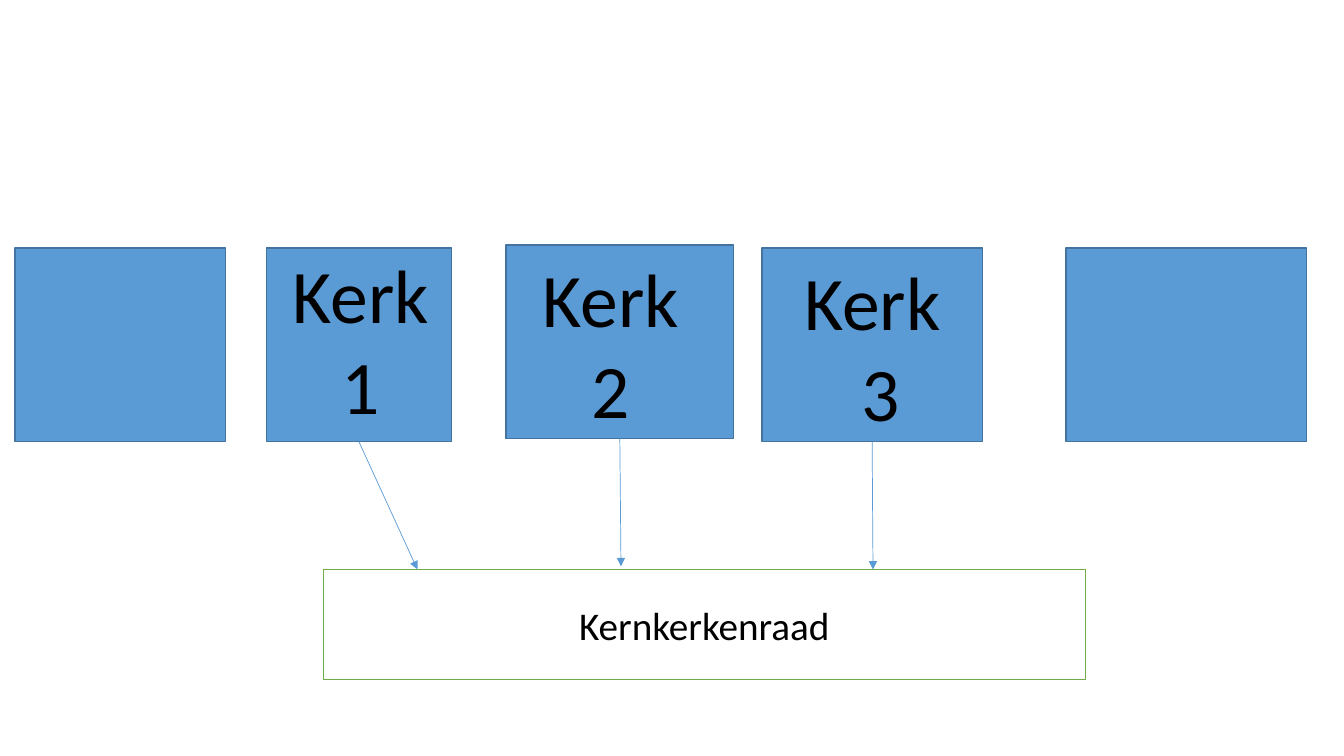
from lxml import etree
from pptx import Presentation
from pptx.dml.color import RGBColor
from pptx.enum.shapes import MSO_CONNECTOR, MSO_SHAPE
from pptx.enum.text import MSO_ANCHOR, MSO_AUTO_SIZE, PP_ALIGN
from pptx.oxml.ns import qn
from pptx.util import Cm, Pt

BLUE = RGBColor(0x5B, 0x9B, 0xD5)
NAVY = RGBColor(0x43, 0x73, 0x9E)
GREEN = RGBColor(0x70, 0xAD, 0x47)
WHITE = RGBColor(0xFF, 0xFF, 0xFF)
BLACK = RGBColor(0x00, 0x00, 0x00)

deck = Presentation()
deck.slide_width, deck.slide_height = Cm(33.87), Cm(19.05)
slide = deck.slides.add_slide(deck.slide_layouts[6])
shapes = slide.shapes


def add_box(left, top, width, height, fill, edge):
    box = shapes.add_shape(MSO_SHAPE.RECTANGLE, Cm(left), Cm(top), Cm(width), Cm(height))
    box.shadow.inherit = False
    box.fill.solid()
    box.fill.fore_color.rgb = fill
    box.line.color.rgb = edge
    box.line.width = Pt(1)
    return box


def write(frame, text, size):
    par = frame.paragraphs[0]
    par.text = text
    par.alignment = PP_ALIGN.CENTER
    for run in par.runs:
        look = {"name": "Calibri", "size": Pt(size)}
        for key, value in look.items():
            setattr(run.font, key, value)
        run.font.color.rgb = BLACK


# Council box
council = add_box(8.15, 14.35, 19.2, 2.77, WHITE, GREEN)
council.text_frame.vertical_anchor = MSO_ANCHOR.MIDDLE
write(council.text_frame, "Kernkerkenraad", 28)

# Row of church boxes: left, top, width
row = [(0.38, 6.25, 5.31), (6.71, 6.25, 4.67), (12.75, 6.17, 5.74),
       (19.2, 6.25, 5.56), (26.87, 6.25, 6.05)]
boxes = [add_box(left, top, width, 4.88, BLUE, NAVY) for left, top, width in row]

# Arrows from the three named churches to the council
ends = [(10.52, 14.35), (15.65, 14.27), (22, 14.35)]
for box, (x, y) in zip(boxes[1:4], ends):
    arrow = shapes.add_connector(MSO_CONNECTOR.STRAIGHT, 0, 0, Cm(x), Cm(y))
    arrow.begin_connect(box, 2)
    arrow.line.color.rgb = BLUE
    arrow.line.width = Pt(0.5)
    etree.SubElement(arrow.line._get_or_add_ln(), qn("a:tailEnd"), type="triangle")
    etree.SubElement(arrow._element.spPr, qn("a:effectLst"))

# Church names: text, left, top, width, wrap
names = [("Kerk\v1", 6.76, 6.13, 4.67, True),
         ("Kerk 2", 12.98, 6.22, 4.83, True),
         ("Kerk\v 3", 19.99, 6.3, 3.99, False)]
for text, left, top, width, wrap in names:
    frame = shapes.add_textbox(Cm(left), Cm(top), Cm(width), Cm(4.88)).text_frame
    frame.word_wrap = wrap
    frame.auto_size = MSO_AUTO_SIZE.SHAPE_TO_FIT_TEXT
    write(frame, text, 54)

deck.save("out.pptx")
